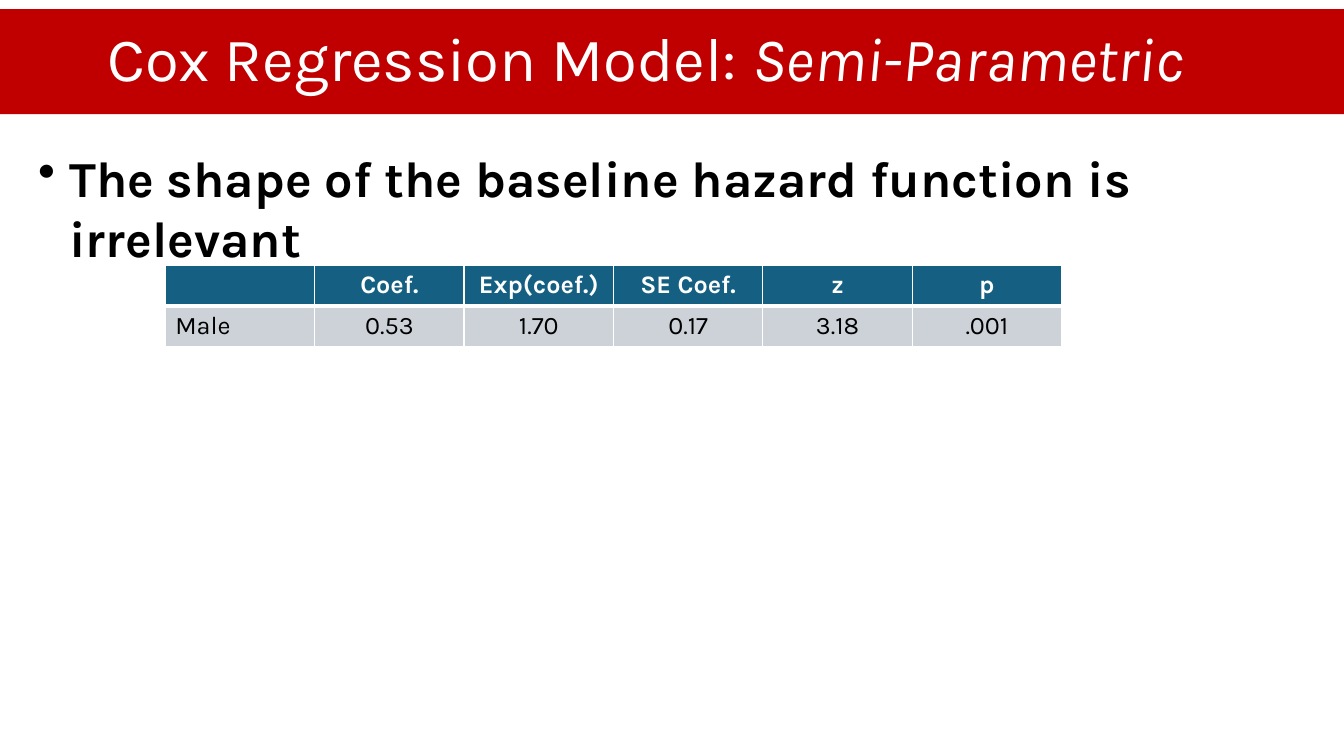
from dataclasses import dataclass

from lxml import etree
from pptx import Presentation
from pptx import util as u
from pptx.dml.color import RGBColor
from pptx.enum import shapes, text
from pptx.oxml.ns import qn


@dataclass(frozen=True)
class Theme:
    """Colours, font and type sizes of the slide."""
    font: str = "Karla"
    red: str = "C00000"
    blue: str = "156082"
    grey: str = "CCD2D8"
    white: str = "FFFFFF"
    black: str = "000000"
    title: int = 44
    body: int = 36
    small: int = 18


THEME = Theme()
WIDE, HIGH = u.Inches(13.33), u.Inches(7.5)
ROWS = [
    ["", "Coef.", "Exp(coef.)", "SE Coef.", "z", "p"],
    ["Male", "0.53", "1.70", "0.17", "3.18", ".001"],
]


def area(left, top, width, height):
    """Turn shares of the slide into a box of lengths."""
    return [round(share * side) for share, side in
            zip((left, top, width, height), (WIDE, HIGH, WIDE, HIGH))]


def style(font, size, color, bold=False):
    """Set the theme font with a size, colour and weight."""
    font.name, font.size, font.bold = THEME.font, u.Pt(size), bold
    font.color.rgb = RGBColor.from_string(color)


def paint(fill, color):
    """Fill with one solid colour."""
    fill.solid()
    fill.fore_color.rgb = RGBColor.from_string(color)


def banner(slide, box, plain, slanted):
    """Draw the title bar with a plain and an italic part."""
    bar = slide.shapes.add_shape(shapes.MSO_SHAPE.RECTANGLE, *box)
    bar.shadow.inherit = False
    bar.line.fill.background()
    paint(bar.fill, THEME.red)
    frame = bar.text_frame
    frame.word_wrap = True
    frame.vertical_anchor = text.MSO_ANCHOR.MIDDLE
    frame.margin_left = round(box[2] * 0.08)
    para = frame.paragraphs[0]
    para.alignment = text.PP_ALIGN.LEFT
    para.line_spacing = 0.9
    style(para.font, THEME.title, THEME.white)
    para.add_run().text = plain
    run = para.add_run()
    run.text = slanted
    run.font.italic = True


def bullet(slide, box, words):
    """Write one bold point with a hanging bullet."""
    frame = slide.shapes.add_textbox(*box).text_frame
    frame.word_wrap = True
    para = frame.paragraphs[0]
    para.text = words
    para.space_before = u.Pt(12)
    style(para.font, THEME.body, THEME.black, True)
    props = para._p.get_or_add_pPr()
    hang = u.Inches(0.31)
    props.set("marL", str(hang))
    props.set("indent", str(-hang))
    mark = etree.Element(qn("a:buChar"), char="•")
    props.find(qn("a:defRPr")).addprevious(mark)


def border(cell, base):
    """Rule a cell in white, with its own width at the base."""
    props = cell._tc.get_or_add_tcPr()
    for spot, (side, width) in enumerate(
            (("L", 1), ("R", 1), ("T", 1), ("B", base))):
        line = etree.Element(qn(f"a:ln{side}"), w=str(u.Pt(width)))
        fill = etree.SubElement(line, qn("a:solidFill"))
        etree.SubElement(fill, qn("a:srgbClr"), val=THEME.white)
        props.insert(spot, line)


def grid(slide, box, rows):
    """Lay out the model table, with a header over plain rows."""
    table = slide.shapes.add_table(len(rows), len(rows[0]), *box).table
    for r, row in enumerate(rows):
        head = r == 0
        for c, words in enumerate(row):
            cell = table.cell(r, c)
            paint(cell.fill, THEME.blue if head else THEME.grey)
            border(cell, 3 if head else 1)
            para = cell.text_frame.paragraphs[0]
            para.text = words
            para.alignment = (text.PP_ALIGN.CENTER if c
                              else text.PP_ALIGN.LEFT)
            style(para.font, THEME.small,
                  THEME.white if head else THEME.black, head)


def main():
    """Build and save the slide."""
    deck = Presentation()
    deck.slide_width, deck.slide_height = WIDE, HIGH
    slide = deck.slides.add_slide(deck.slide_layouts[6])
    banner(slide, area(0, 0.012, 1, 0.139),
           "Cox Regression Model: ", "Semi-Parametric")
    bullet(slide, area(0.021, 0.188, 1, 0.095),
           "The shape of the baseline hazard function is irrelevant")
    grid(slide, area(0.123, 0.351, 0.667, 0.108), ROWS)
    deck.save("out.pptx")


if __name__ == "__main__":
    main()
